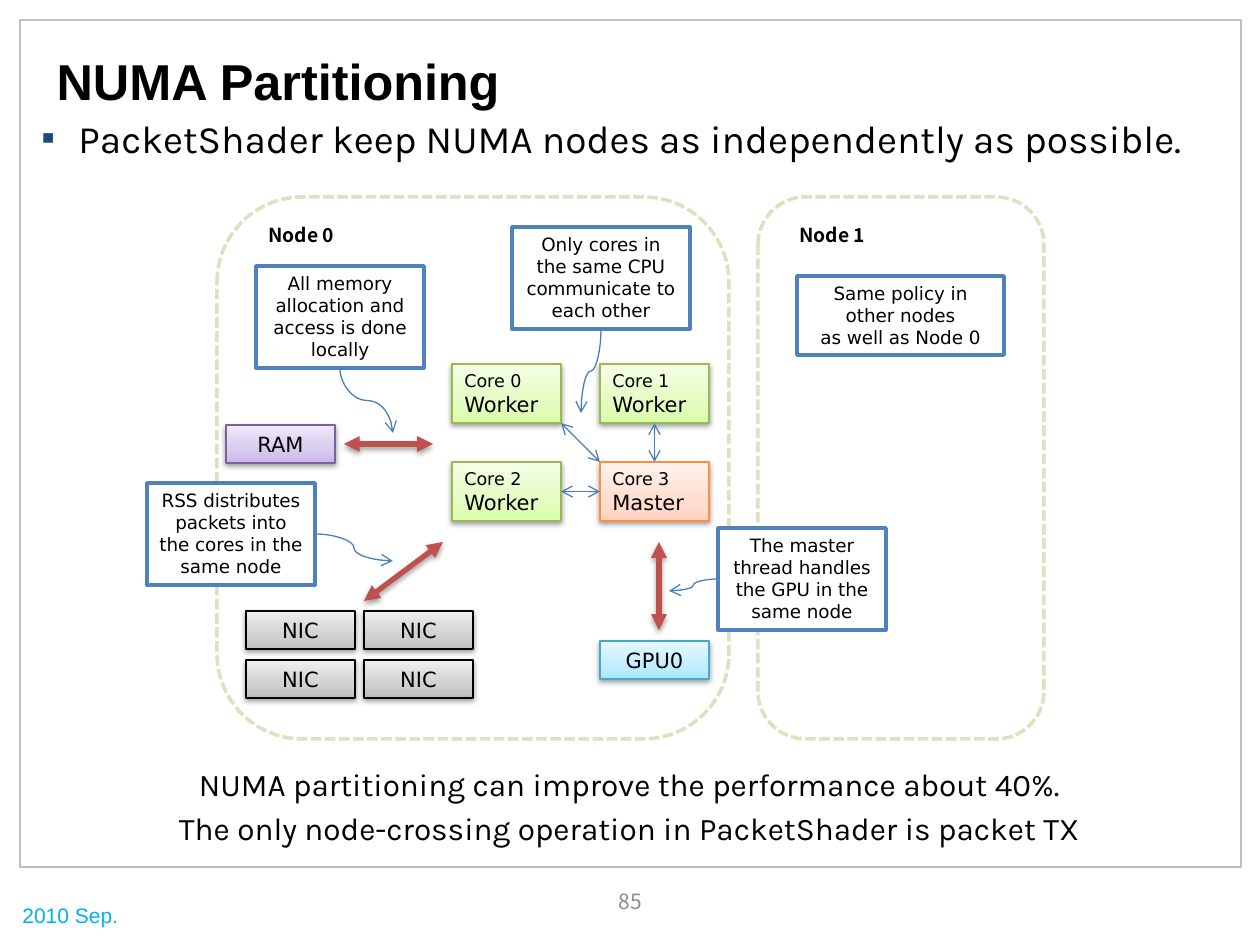
from dataclasses import dataclass

from lxml import etree
from pptx import Presentation
from pptx import util as u
from pptx.dml.color import RGBColor
from pptx.enum import dml, shapes, text
from pptx.oxml import parse_xml
from pptx.oxml.ns import nsdecls, qn

PX_PER_INCH = 126
BLACK, NOTE_BLUE, ARROW_BLUE, ARROW_RED = "000000", "4F81BD", "4B7EBC", "C0504D"
SANS, BODY, LABEL = "DejaVu Sans", "Karla", "Noto Sans CJK KR"
LEFT, CENTER = text.PP_ALIGN.LEFT, text.PP_ALIGN.CENTER
KIND = shapes.MSO_SHAPE
STRAIGHT, CURVE = shapes.MSO_CONNECTOR.STRAIGHT, shapes.MSO_CONNECTOR.CURVE
TOP_SIDE, LEFT_SIDE, BOTTOM_SIDE, RIGHT_SIDE = range(4)


@dataclass(frozen=True)
class Area:
    left: int
    top: int
    width: int
    height: int

    def emu(self):
        return [px(n) for n in (self.left, self.top, self.width, self.height)]


@dataclass(frozen=True)
class Style:
    line: str
    stops: tuple  # colours from bottom to top


GREEN = Style("98B955", ("DAFDA7", "E4FCC2", "F5FFE7"))
ORANGE = Style("F69240", ("FFD2BD", "FFDED0", "FFF2ED"))
CYAN = Style("46AAC5", ("A7E6FF", "C1EDFF", "E7F8FF"))
PURPLE = Style("7D60A0", ("C9B5E8", "D8CBEE", "F0EAF9"))
GRAY = Style("000000", ("BDBDBD", "D1D1D1", "EEEEEE"))


def px(length: float) -> int:
    return round(length * u.Inches(1) / PX_PER_INCH)


def color(value: str) -> RGBColor:
    return RGBColor.from_string(value)


def write(para, words: str, *, size=10.5, font=SANS, fill=BLACK, bold=False, align=LEFT):
    para.alignment = align
    span = para.add_run()
    span.text = words
    span.font.size, span.font.name, span.font.bold = u.Pt(size), font, bold
    span.font.color.rgb = color(fill)


def prepare(box, anchor=text.MSO_ANCHOR.TOP):
    frame = box.text_frame
    frame.word_wrap = True
    frame.auto_size = text.MSO_AUTO_SIZE.NONE
    frame.vertical_anchor = anchor
    return frame.paragraphs[0]


def add_text(page, area: Area, words: str, anchor=text.MSO_ANCHOR.TOP, **look):
    box = page.shapes.add_textbox(*area.emu())
    write(prepare(box, anchor), words, **look)
    return box


def add_box(page, area: Area, *, line: str, width=0.75, fill=None, kind=KIND.RECTANGLE):
    box = page.shapes.add_shape(kind, *area.emu())
    box.shadow.inherit = False
    if fill:
        box.fill.solid()
        box.fill.fore_color.rgb = color(fill)
    else:
        box.fill.background()
    box.line.color.rgb = color(line)
    box.line.width = u.Pt(width)
    return box


def add_shadow(effects):
    effects.append(parse_xml(
        f'<a:outerShdw {nsdecls("a")} blurRad="40000" dist="20000" dir="5400000" rotWithShape="0">'
        '<a:srgbClr val="000000"><a:alpha val="38000"/></a:srgbClr></a:outerShdw>'))


def add_unit(page, area: Area, style: Style, name: str, role=None):
    """Shaded hardware unit; a core also shows its role on a second line."""
    box = add_box(page, area, line=style.line)
    box.fill.gradient()
    box.fill.gradient_angle = 90
    stops = box._element.spPr.find(qn("a:gradFill")).find(qn("a:gsLst"))
    for stop in list(stops):
        stops.remove(stop)
    for place, value in zip((0, 35, 100), style.stops):
        stops.append(parse_xml(f'<a:gs {nsdecls("a")} pos="{place * 1000}">'
                               f'<a:srgbClr val="{value}"/></a:gs>'))
    add_shadow(box._element.spPr.find(qn("a:effectLst")))
    para = prepare(box)
    if role:
        write(para, name, size=10)
        para.add_line_break()
        write(para, role, size=12)
    else:
        write(para, name, size=12, align=CENTER)
    return box


def add_note(page, area: Area, *lines: str):
    box = add_box(page, area, line=NOTE_BLUE, width=2, fill="FFFFFF")
    para = prepare(box)
    for number, words in enumerate(lines):
        if number:
            para.add_line_break()
        write(para, words, align=CENTER)
    return box


def add_arrow(page, start, end, *, kind=STRAIGHT, line=ARROW_BLUE, width=0.75,
              tip="arrow", both=True, shadow=False):
    arrow = page.shapes.add_connector(kind, *map(px, (*start, *end)))
    arrow.line.color.rgb = color(line)
    arrow.line.width = u.Pt(width)
    ends = ("headEnd", "tailEnd") if both else ("tailEnd",)
    for name in ends:
        etree.SubElement(arrow.line._get_or_add_ln(), qn(f"a:{name}"), type=tip)
    effects = etree.SubElement(arrow._element.spPr, qn("a:effectLst"))
    if shadow:
        add_shadow(effects)
    return arrow


def add_pointer(page, note, side: int, start, end):
    """Curved arrow from a note; it leaves a bottom side vertically."""
    arrow = add_arrow(page, start, end, kind=CURVE, both=False)
    arrow.begin_connect(note, side)
    if side == BOTTOM_SIDE:
        across, down = end[0] - start[0], end[1] - start[1]
        middle_x, middle_y = (start[0] + end[0]) / 2, (start[1] + end[1]) / 2
        arrow.left, arrow.top = px(middle_x - down / 2), px(middle_y - abs(across) / 2)
        arrow.width, arrow.height = px(down), px(abs(across))
        frame = arrow._element.spPr.find(qn("a:xfrm"))
        for flip in ("flipH", "flipV"):
            frame.attrib.pop(flip, None)
        frame.set("rot", "5400000")
        if across > 0:
            frame.set("flipV", "1")


def add_bullet(para, mark: str, mark_color: str):
    props = para._p.get_or_add_pPr()
    props.set("marL", str(px(37)))
    props.set("indent", str(px(-37)))
    tint = etree.SubElement(props, qn("a:buClr"))
    etree.SubElement(tint, qn("a:srgbClr"), val=mark_color)
    etree.SubElement(props, qn("a:buFont"), typeface="Arial")
    etree.SubElement(props, qn("a:buChar"), char=mark)


def main():
    deck = Presentation()
    deck.slide_width, deck.slide_height = px(1260), px(945)
    page = deck.slides.add_slide(deck.slide_layouts[5])

    # Page frame, title and footer
    add_box(page, Area(20, 20, 1221, 847), line="BFBFBF")
    title = page.shapes.title
    title.left, title.top, title.width, title.height = Area(44, 46, 1171, 69).emu()
    write(prepare(title, text.MSO_ANCHOR.MIDDLE), "NUMA Partitioning",
          size=28.8, font="Arial", bold=True)
    add_text(page, Area(10, 896, 130, 37), "2010 Sep.", size=12, font="Arial", fill="00B0F0")
    add_text(page, Area(484, 876, 293, 50), "85", text.MSO_ANCHOR.MIDDLE,
             size=12, font=LABEL, fill="8C8C8C", align=CENTER)

    # Opening bullet and closing statements
    box = page.shapes.add_textbox(*Area(29, 108, 1201, 59).emu())
    para = prepare(box)
    add_bullet(para, "▪", "1F497D")
    write(para, "PacketShader keep NUMA nodes as independently as possible.", size=22.2, font=BODY)
    closing = add_text(page, Area(29, 759, 1201, 108),
                       "NUMA partitioning can improve the performance about 40%.",
                       size=18, font=BODY, align=CENTER)
    para = closing.text_frame.add_paragraph()
    para.space_before = u.Pt(3.6)
    write(para, "The only node-crossing operation in PacketShader is packet TX",
          size=18, font=BODY, align=CENTER)

    # NUMA nodes
    for name, left, width, label_left in (("Node 0", 217, 512, 256), ("Node 1", 758, 286, 787)):
        node = add_box(page, Area(left, 197, width, 542), line="D7E4BD", width=2,
                       kind=KIND.ROUNDED_RECTANGLE)
        node.line.dash_style = dml.MSO_LINE.SQUARE_DOT
        add_text(page, Area(label_left, 217, 98, 37), name, size=11, font=LABEL, bold=True)

    # Cores in a two by two grid, and the links to the master
    cores = []
    for number in range(4):
        row, column = divmod(number, 2)
        style, role = (ORANGE, "Master") if number == 3 else (GREEN, "Worker")
        area = Area(452 + 148 * column, 364 + 98 * row, 109, 59)
        cores.append(add_unit(page, area, style, f"Core {number}", role))
    add_arrow(page, (561, 423), (600, 462))
    for core, core_side, master_side in ((1, BOTTOM_SIDE, TOP_SIDE), (2, RIGHT_SIDE, LEFT_SIDE)):
        link = add_arrow(page, (600, 423), (600, 462))
        link.begin_connect(cores[core], core_side)
        link.end_connect(cores[3], master_side)

    # Memory, GPU and network cards
    add_unit(page, Area(600, 641, 109, 38), CYAN, "GPU0")
    add_unit(page, Area(226, 425, 109, 38), PURPLE, "RAM")
    for number in range(4):
        row, column = divmod(number, 2)
        add_unit(page, Area(246 + 118 * column, 611 + 49 * row, 109, 38), GRAY, "NIC")

    # Data paths
    for start, end in (((344, 444), (433, 444)), ((364, 601), (443, 542)), ((659, 630), (659, 542))):
        add_arrow(page, start, end, line=ARROW_RED, width=3, tip="triangle", shadow=True)

    # Notes and their pointers
    memory = add_note(page, Area(256, 266, 168, 102), "All memory allocation and access is done locally")
    talk = add_note(page, Area(512, 227, 178, 102), "Only cores in the same CPU communicate to each other")
    packets = add_note(page, Area(147, 483, 168, 102), "RSS distributes packets into the cores in the same node")
    master = add_note(page, Area(718, 528, 168, 102), "The master thread handles the GPU in the same node")
    add_note(page, Area(797, 276, 207, 79), "Same policy in other nodes", "as well as Node 0")
    add_pointer(page, memory, BOTTOM_SIDE, (340, 368), (393, 433))
    add_pointer(page, talk, BOTTOM_SIDE, (601, 329), (581, 413))
    add_pointer(page, packets, RIGHT_SIDE, (315, 534), (393, 561))
    add_pointer(page, master, LEFT_SIDE, (718, 579), (669, 591))

    deck.save("out.pptx")


if __name__ == "__main__":
    main()
